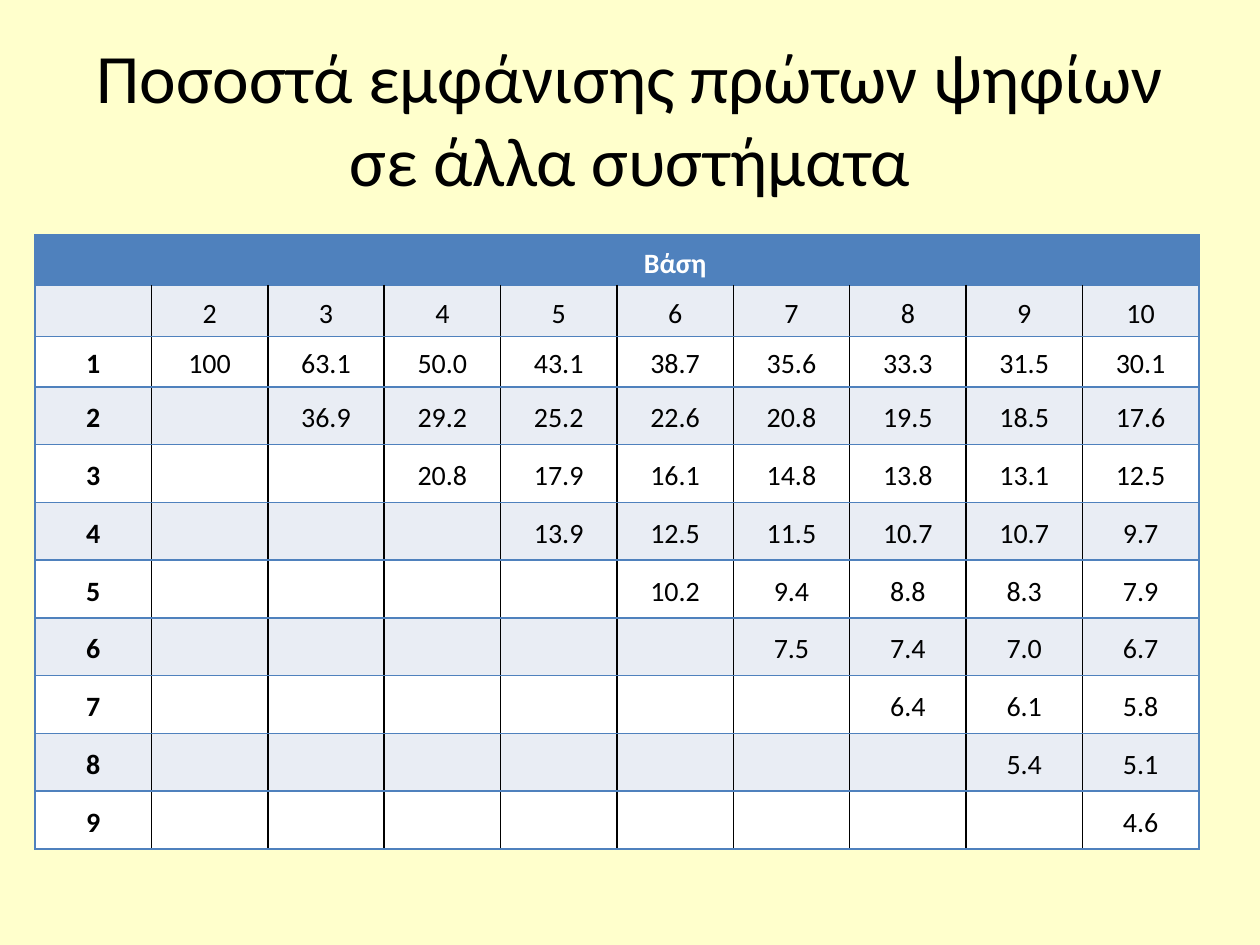
"""Build a slide with a table of first-digit frequencies in number bases 2 to 10."""
import lxml.etree
import pptx
import pptx.dml.color
import pptx.enum.text
import pptx.oxml.ns
import pptx.util

PX = 914400 / 126
COLOURS = {
    "page": "FFFFCC",
    "header": "4F81BD",
    "band": "E9EDF4",
    "plain": "FFFFFF",
    "ink": "000000",
    "header ink": "FFFFFF",
}
ANCHOR = pptx.enum.text.MSO_ANCHOR
CENTER = pptx.enum.text.PP_ALIGN.CENTER
BASES = range(2, 11)
FREQUENCIES = [
    ["100", "63.1", "50.0", "43.1", "38.7", "35.6", "33.3", "31.5", "30.1"],
    ["36.9", "29.2", "25.2", "22.6", "20.8", "19.5", "18.5", "17.6"],
    ["20.8", "17.9", "16.1", "14.8", "13.8", "13.1", "12.5"],
    ["13.9", "12.5", "11.5", "10.7", "10.7", "9.7"],
    ["10.2", "9.4", "8.8", "8.3", "7.9"],
    ["7.5", "7.4", "7.0", "6.7"],
    ["6.4", "6.1", "5.8"],
    ["5.4", "5.1"],
    ["4.6"],
]


def write(paragraph, text, size, colour, bold=False):
    paragraph.alignment = CENTER
    run = paragraph.add_run()
    run.text = text
    font_format = {"name": "Calibri", "size": pptx.util.Pt(size), "bold": bold}
    for attribute, value in font_format.items():
        setattr(run.font, attribute, value)
    run.font.color.rgb = pptx.dml.color.RGBColor.from_string(COLOURS[colour])


def draw_borders(cell, sides):
    properties = cell._tc.get_or_add_tcPr()
    for position, (side, colour) in enumerate(sides.items()):
        line = lxml.etree.Element(pptx.oxml.ns.qn(f"a:ln{side}"), w="12700")
        fill = lxml.etree.SubElement(line, pptx.oxml.ns.qn("a:solidFill"))
        lxml.etree.SubElement(fill, pptx.oxml.ns.qn("a:srgbClr"), val=COLOURS[colour])
        properties.insert(position, line)


deck = pptx.Presentation()
deck.slide_width = round(1260 * PX)
deck.slide_height = round(945 * PX)
slide = deck.slides.add_slide(deck.slide_layouts[5])
slide.background.fill.solid()
slide.background.fill.fore_color.rgb = pptx.dml.color.RGBColor.from_string(COLOURS["page"])

title = slide.shapes.title
title_place = {"left": 63, "top": 38, "width": 1134, "height": 158}
for attribute, value in title_place.items():
    setattr(title, attribute, round(value * PX))
title_format = {
    "word_wrap": True,
    "auto_size": pptx.enum.text.MSO_AUTO_SIZE.NONE,
    "vertical_anchor": ANCHOR.MIDDLE,
}
for attribute, value in title_format.items():
    setattr(title.text_frame, attribute, value)
write(title.text_frame.paragraphs[0], "Ποσοστά εμφάνισης πρώτων ψηφίων σε άλλα συστήματα", 39.6, "ink")

table_rows = [["", "Βάση"] + [""] * 8, [""] + [str(base) for base in BASES]]
for digit, values in enumerate(FREQUENCIES, start=1):
    table_rows.append([str(digit)] + [""] * (len(BASES) - len(values)) + values)

place = [round(value * PX) for value in (35, 235, 1164, 614)]
frequency_table = slide.shapes.add_table(len(table_rows), 10, *place).table
frequency_table.first_row = False
frequency_table.horz_banding = False
for column in frequency_table.columns:
    column.width = round(1164 * PX / 10)
for index, row in enumerate(frequency_table.rows):
    row.height = round(152 * PX / 3 if index < 3 else 462 * PX / 8)

for row_index, row_texts in enumerate(table_rows):
    is_header = row_index == 0
    background = "header" if is_header else "band" if row_index % 2 else "plain"
    for column_index, text in enumerate(row_texts):
        cell = frequency_table.cell(row_index, column_index)
        cell.fill.solid()
        cell.fill.fore_color.rgb = pptx.dml.color.RGBColor.from_string(COLOURS[background])
        for margin in ("left", "top", "right", "bottom"):
            setattr(cell, f"margin_{margin}", round(5 * PX))
        cell.vertical_anchor = ANCHOR.BOTTOM if is_header else ANCHOR.MIDDLE
        draw_borders(cell, {
            "L": "header" if is_header or column_index == 0 else "ink",
            "R": "header" if is_header or column_index == 9 else "ink",
            "T": "header",
            "B": "header",
        })
        if text:
            paragraph = cell.text_frame.paragraphs[0]
            paragraph.line_spacing = 1.15
            if is_header:
                paragraph.space_after = pptx.util.Pt(10)
            ink = "header ink" if is_header else "ink"
            write(paragraph, text, 16, ink, is_header or column_index == 0)

frequency_table.cell(0, 1).merge(frequency_table.cell(0, 9))
deck.save("out.pptx")
